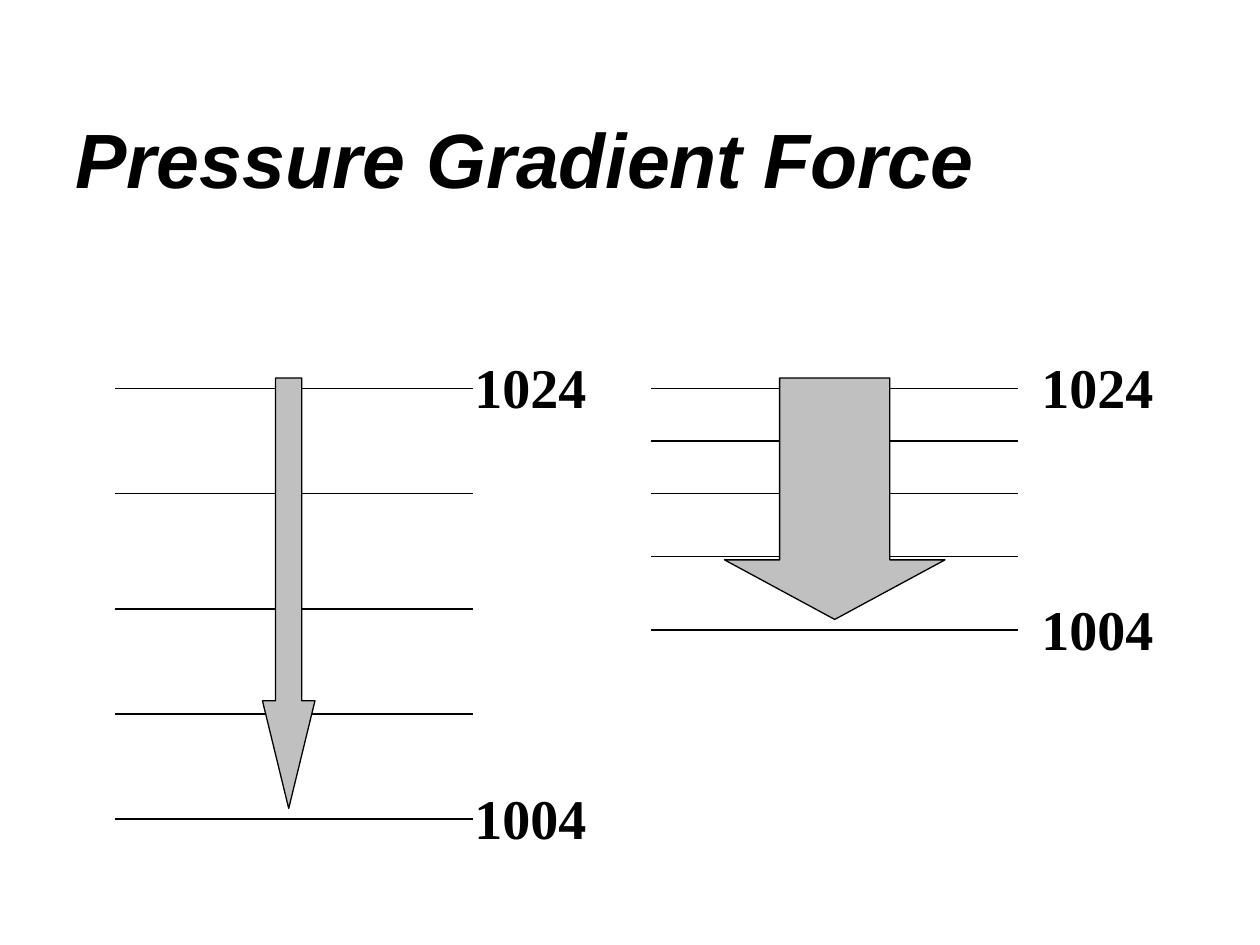
"""Build the pressure gradient force slide."""
from dataclasses import dataclass

from lxml.etree import SubElement
from pptx import Presentation
from pptx.dml.color import RGBColor
from pptx.enum.shapes import MSO_CONNECTOR, MSO_SHAPE
from pptx.enum.text import MSO_ANCHOR, MSO_AUTO_SIZE, PP_ALIGN
from pptx.oxml.ns import qn
from pptx.util import Pt


@dataclass(frozen=True)
class Theme:
    """Colours, fonts and sizes of the slide."""
    ink: RGBColor = RGBColor(0, 0, 0)
    arrow: RGBColor = RGBColor(0xC0, 0xC0, 0xC0)
    line_width: float = 0.75
    title_font: str = "Arial"
    title_size: int = 44
    label_font: str = "Times New Roman"
    label_size: int = 32


@dataclass(frozen=True)
class Panel:
    """Geometry of one set of isobars and its force arrow."""
    left: float
    right: float
    levels: tuple
    label_left: float
    arrow_centre: float
    arrow_width: float
    head_ratio: float


THEME = Theme()
PANELS = (
    Panel(66, 270, (222, 282, 348, 408, 468), 264, 165, 30, 2.05),
    Panel(372, 582, (222, 252, 282, 318, 360), 588, 477, 126, 0.27),
)


def set_attributes(target, values):
    """Set each named attribute of the target."""
    for name, value in values.items():
        setattr(target, name, value)


def style_text(shape, text, frame_format, font_format):
    """Write one left-aligned paragraph with the given formats."""
    frame = shape.text_frame
    frame.text = text
    set_attributes(frame, {"word_wrap": True, **frame_format})
    paragraph = frame.paragraphs[0]
    paragraph.alignment = PP_ALIGN.LEFT
    set_attributes(paragraph.font, {"bold": True, **font_format})
    paragraph.font.color.rgb = THEME.ink


def style_line(shape):
    """Give a shape or connector the thin outline."""
    shape.line.color.rgb = THEME.ink
    shape.line.width = Pt(THEME.line_width)


def add_title(slide, text):
    """Place and format the title placeholder."""
    title = slide.shapes.title
    set_attributes(title, {"left": Pt(36), "top": Pt(36),
                           "width": Pt(648), "height": Pt(108)})
    style_text(title, text,
               {"vertical_anchor": MSO_ANCHOR.MIDDLE, "auto_size": MSO_AUTO_SIZE.NONE},
               {"name": THEME.title_font, "size": Pt(THEME.title_size), "italic": True})


def add_isobar(group, left, right, level):
    """Draw one horizontal isobar."""
    isobar = group.shapes.add_connector(
        MSO_CONNECTOR.STRAIGHT, Pt(left), Pt(level), Pt(right), Pt(level))
    style_line(isobar)
    SubElement(isobar._element.spPr, qn("a:effectLst"))


def add_pressure_label(group, text, left, level):
    """Label an isobar with its pressure."""
    label = group.shapes.add_textbox(Pt(left), Pt(level - 24), Pt(120), Pt(45.5))
    style_text(label, text,
               {"vertical_anchor": MSO_ANCHOR.TOP, "auto_size": MSO_AUTO_SIZE.SHAPE_TO_FIT_TEXT},
               {"name": THEME.label_font, "size": Pt(THEME.label_size)})


def add_force_arrow(group, panel):
    """Draw the arrow from high to low pressure."""
    top, bottom = panel.levels[0] - 6, panel.levels[-1] - 6
    arrow = group.shapes.add_shape(
        MSO_SHAPE.DOWN_ARROW, Pt(panel.arrow_centre - panel.arrow_width / 2), Pt(top),
        Pt(panel.arrow_width), Pt(bottom - top))
    arrow.adjustments[0] = 0.5
    arrow.adjustments[1] = panel.head_ratio
    arrow.fill.solid()
    arrow.fill.fore_color.rgb = THEME.arrow
    arrow.shadow.inherit = False
    style_line(arrow)


def add_panel(slide, panel):
    """Group the isobars, labels and arrow of one panel."""
    group = slide.shapes.add_group_shape()
    for level in panel.levels:
        add_isobar(group, panel.left, panel.right, level)
    for text, level in (("1004", panel.levels[-1]), ("1024", panel.levels[0])):
        add_pressure_label(group, text, panel.label_left, level)
    add_force_arrow(group, panel)


def main():
    """Build and save the presentation."""
    presentation = Presentation()
    set_attributes(presentation, {"slide_width": Pt(720), "slide_height": Pt(540)})
    slide = presentation.slides.add_slide(presentation.slide_layouts.get_by_name("Title Only"))
    add_title(slide, "Pressure Gradient Force")
    for panel in PANELS:
        add_panel(slide, panel)
    presentation.save("out.pptx")


if __name__ == "__main__":
    main()
